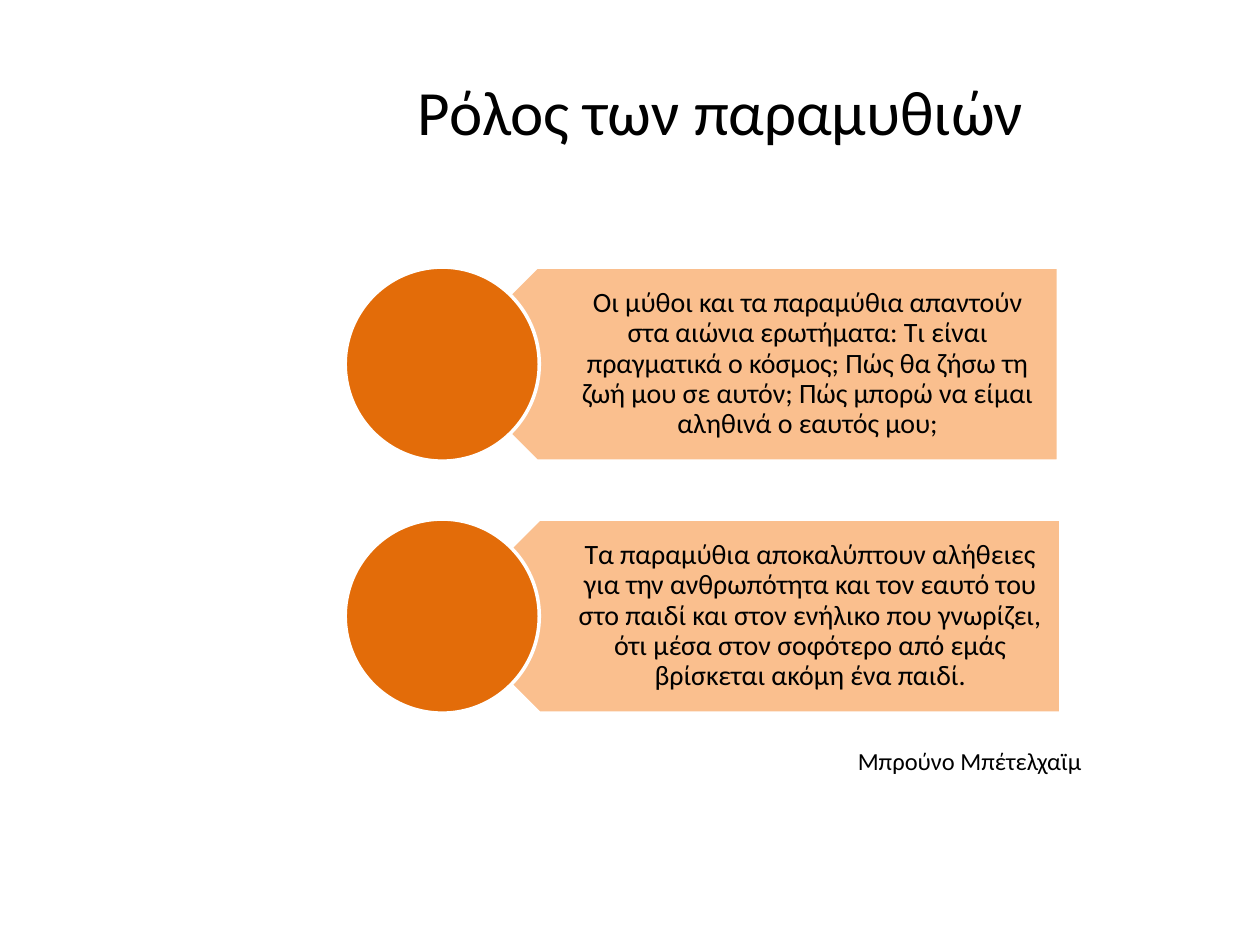
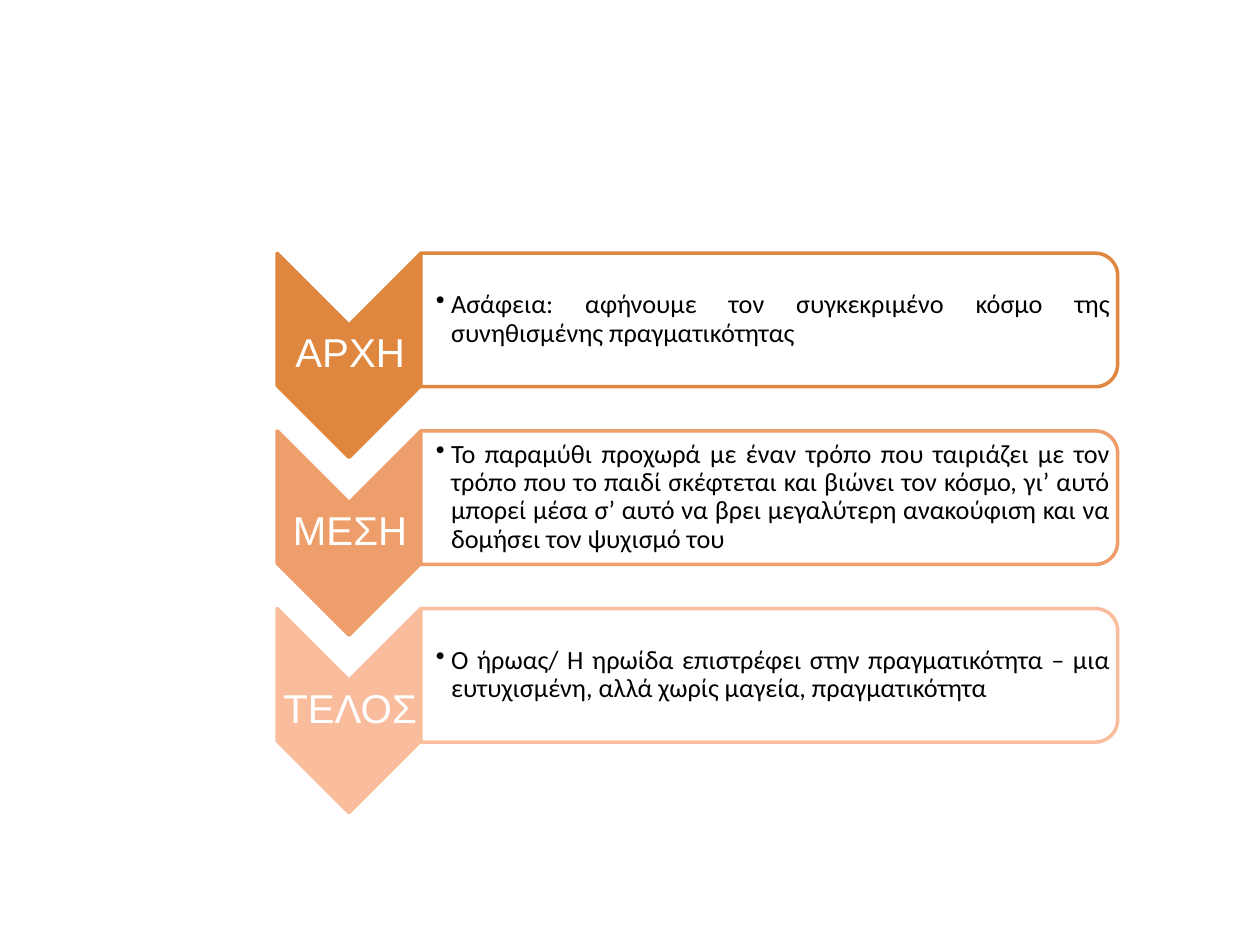
"""Build two slides on the role and the structure of fairy tales."""
import pptx
import pptx.dml.color
import pptx.enum.shapes
import pptx.enum.text
import pptx.oxml
import pptx.oxml.ns
import pptx.util

PX = 9144
SHAPE = pptx.enum.shapes.MSO_SHAPE
ALIGN = pptx.enum.text.PP_ALIGN
ANCHOR = pptx.enum.text.MSO_ANCHOR
COLORS = {
    "text": "000000",
    "white": "FFFFFF",
    "banner": "FABF8E",
    "disc": "E36C09",
    "start": "DF873F",
    "middle": "EE9E6B",
    "end": "F9BD9D",
}
STYLES = {
    "title": {"size": 36, "insets": (10, 5, 10, 5)},
    "banner": {"size": 16, "insets": (68, 7, 12, 7), "line_spacing": 0.9},
    "author": {"size": 14, "insets": (10, 5, 10, 5), "align": ALIGN.LEFT, "anchor": ANCHOR.TOP},
    "stage": {"size": 23, "insets": (2, 2, 2, 2), "line_spacing": 0.9,
              "font": "Arial", "color": "white"},
    "detail": {"size": 15, "insets": (12, 1, 1, 1), "line_spacing": 0.9,
               "align": ALIGN.JUSTIFY, "bullet_indent": 12},
}
BANNERS = [
    (349, "Οι μύθοι και τα παραμύθια απαντούν στα αιώνια ερωτήματα: Τι είναι "
          "πραγματικά ο κόσμος; Πώς θα ζήσω τη ζωή μου σε αυτόν; Πώς μπορώ να "
          "είμαι αληθινά ο εαυτός μου;"),
    (351, "Τα παραμύθια αποκαλύπτουν αλήθειες για την ανθρωπότητα και τον εαυτό "
          "του στο παιδί και στον ενήλικο που γνωρίζει, ότι μέσα στον σοφότερο "
          "από εμάς βρίσκεται ακόμη ένα παιδί."),
]
STAGES = [
    ("start", "ΑΡΧΗ",
     "Ασάφεια: αφήνουμε τον συγκεκριμένο κόσμο της συνηθισμένης πραγματικότητας"),
    ("middle", "ΜΕΣΗ",
     "Το παραμύθι προχωρά με έναν τρόπο που ταιριάζει με τον τρόπο που το παιδί "
     "σκέφτεται και βιώνει τον κόσμο, γι’ αυτό μπορεί μέσα σ’ αυτό να βρει "
     "μεγαλύτερη ανακούφιση και να δομήσει τον ψυχισμό του"),
    ("end", "ΤΕΛΟΣ",
     "Ο ήρωας/ Η ηρωίδα επιστρέφει στην πραγματικότητα – μια ευτυχισμένη, αλλά "
     "χωρίς μαγεία, πραγματικότητα"),
]


def to_emu(*lengths):
    """Turn px lengths into EMU."""
    return [pptx.util.Emu(round(length * PX)) for length in lengths]


def rgb(name):
    """Look up a named colour."""
    return pptx.dml.color.RGBColor.from_string(COLORS[name])


def set_attributes(target, values):
    """Set every attribute in a dict of format values."""
    for name, value in values.items():
        setattr(target, name, value)


def add_bullet(paragraph, indent):
    """Give a paragraph a hanging bullet."""
    properties = paragraph._p.get_or_add_pPr()
    width = to_emu(indent)[0]
    properties.set("marL", str(width))
    properties.set("indent", str(-width))
    color = pptx.oxml.parse_xml(
        f'<a:buClr {pptx.oxml.ns.nsdecls("a")}><a:srgbClr val="{COLORS["text"]}"/></a:buClr>')
    character = pptx.oxml.parse_xml(f'<a:buChar {pptx.oxml.ns.nsdecls("a")} char="•"/>')
    properties.extend([color, character])


def add_text(shapes, box, text, style_name):
    """Add a text box in one of the shared styles."""
    style = STYLES[style_name]
    text_box = shapes.add_textbox(*to_emu(*box))
    frame = text_box.text_frame
    sides = ("margin_left", "margin_top", "margin_right", "margin_bottom")
    set_attributes(frame, dict(zip(sides, to_emu(*style["insets"]))))
    set_attributes(frame, {
        "word_wrap": True,
        "vertical_anchor": style.get("anchor", ANCHOR.MIDDLE),
    })
    paragraph = frame.paragraphs[0]
    if "bullet_indent" in style:
        add_bullet(paragraph, style["bullet_indent"])
    set_attributes(paragraph, {
        "alignment": style.get("align", ALIGN.CENTER),
        "line_spacing": style.get("line_spacing", 1.0),
    })
    run = paragraph.add_run()
    run.text = text
    set_attributes(run.font, {
        "name": style.get("font", "Calibri"),
        "size": pptx.util.Pt(style["size"]),
    })
    run.font.color.rgb = rgb(style.get("color", "text"))


def add_figure(shapes, kind, box, fill, line, rotation=0, adjustments=()):
    """Add a preset shape that covers the given box after rotation."""
    left, top, width, height = box
    if rotation % 180:
        left, top = left + (width - height) / 2, top + (height - width) / 2
        width, height = height, width
    shape = shapes.add_shape(kind, *to_emu(left, top, width, height))
    set_attributes(shape, {"rotation": rotation})
    shape.shadow.inherit = False
    for index, value in enumerate(adjustments):
        shape.adjustments[index] = value
    shape.fill.solid()
    shape.fill.fore_color.rgb = rgb(fill)
    shape.line.color.rgb = rgb(line)
    shape.line.width = pptx.util.Pt(2)
    return shape


def set_opacity(shape, percent):
    """Make a solid fill partly transparent."""
    color = shape.fill._xPr.find(".//" + pptx.oxml.ns.qn("a:srgbClr"))
    color.append(pptx.oxml.parse_xml(
        f'<a:alpha {pptx.oxml.ns.nsdecls("a")} val="{percent * 1000}"/>'))


def add_banner(shapes, box, disc_left, text):
    """Add an arrow banner with its text and a disc over its tip."""
    left, top, width, height = box
    add_figure(shapes, SHAPE.PENTAGON, box, "banner", "white", 180, (0.5,))
    add_text(shapes, (left + 38, top, width - 39, height), text, "banner")
    add_figure(shapes, SHAPE.OVAL, (disc_left, top, height, height), "disc", "white")


def add_stage(shapes, box, color, label, detail):
    """Add a downward chevron with its label and a panel to its right."""
    left, top, width, height = box
    chevron_width, panel_height = 114, 106
    add_figure(shapes, SHAPE.CHEVRON, (left, top, chevron_width, height),
               color, color, 90, (0.5,))
    add_text(shapes, (left + 1, top + 56, chevron_width, 49), label, "stage")
    panel = add_figure(shapes, SHAPE.ROUND_2_SAME_RECTANGLE,
                       (left + chevron_width, top, width - chevron_width, panel_height),
                       "white", color, 90, (0.167, 0))
    set_opacity(panel, 90)
    add_text(shapes, (left + chevron_width, top + 5, width - chevron_width - 5, 95),
             detail, "detail")


def build_role_slide(slide):
    """Build the slide on the role of fairy tales."""
    add_text(slide.shapes, (122, 25, 900, 125), "Ρόλος των παραμυθιών", "title")
    group = slide.shapes.add_group_shape()
    for row, (left, text) in enumerate(BANNERS):
        add_banner(group.shapes, (left, 212 + 200 * row, 491, 154), 274, text)
    add_text(slide.shapes, (671, 587, 216, 34), "Μπρούνο Μπέτελχαϊμ", "author")


def build_stages_slide(slide):
    """Build the slide on the three stages of a tale."""
    group = slide.shapes.add_group_shape()
    for row, stage in enumerate(STAGES):
        add_stage(group.shapes, (220, 201 + 141 * row, 667, 162), *stage)


def main():
    """Build and save the presentation."""
    presentation = pptx.Presentation()
    width, height = to_emu(1000, 750)
    set_attributes(presentation, {"slide_width": width, "slide_height": height})
    for build in (build_role_slide, build_stages_slide):
        build(presentation.slides.add_slide(presentation.slide_layouts[6]))
    presentation.save("out.pptx")


if __name__ == "__main__":
    main()
